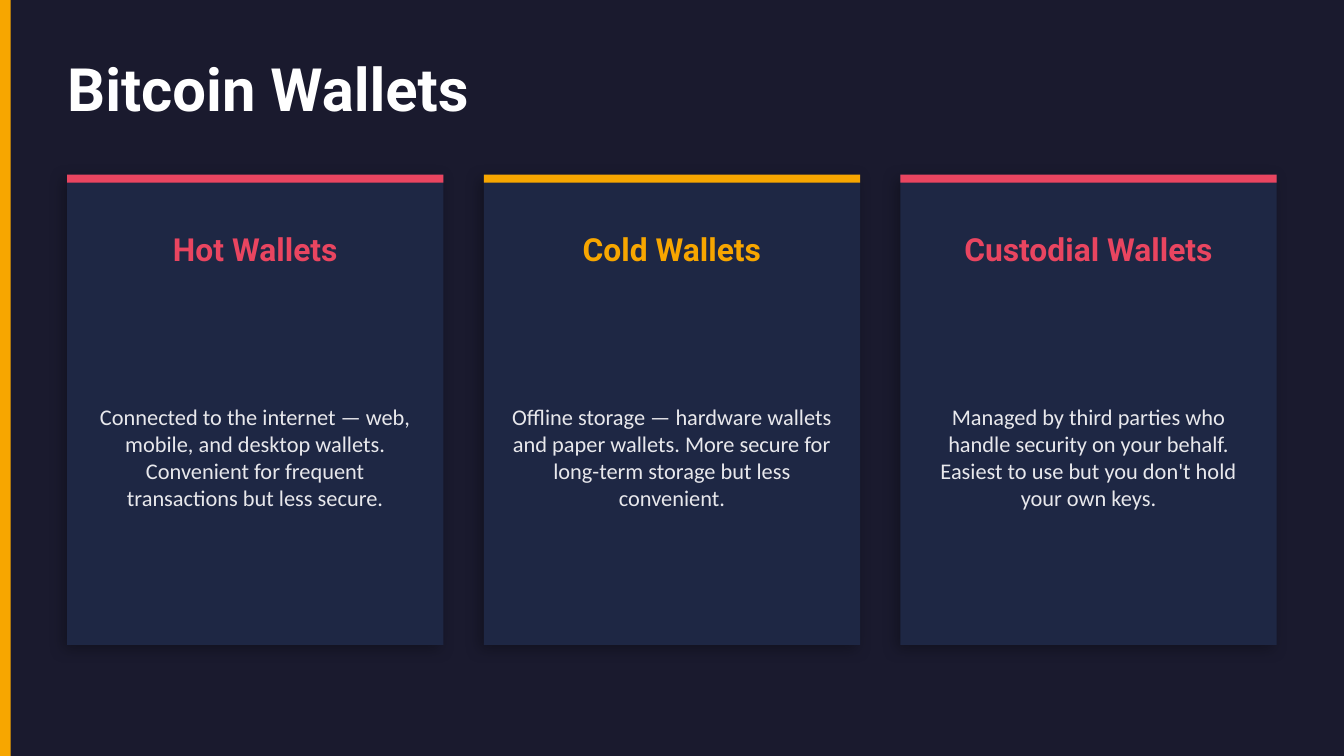
from lxml import etree
from pptx import Presentation
from pptx.dml.color import RGBColor
from pptx.enum.shapes import MSO_SHAPE
from pptx.enum.text import MSO_ANCHOR, PP_ALIGN
from pptx.oxml.ns import qn
from pptx.util import Inches, Pt

RECT = MSO_SHAPE.RECTANGLE
MIDDLE = MSO_ANCHOR.MIDDLE
LEFT, CENTER = PP_ALIGN.LEFT, PP_ALIGN.CENTER

NIGHT = RGBColor(0x1A, 0x1A, 0x2E)
NAVY = RGBColor(0x1E, 0x27, 0x44)
GOLD = RGBColor(0xF7, 0xA6, 0x00)
ROSE = RGBColor(0xE9, 0x45, 0x60)
WHITE = RGBColor(0xFF, 0xFF, 0xFF)
PALE = RGBColor(0xE8, 0xE8, 0xEC)

deck = Presentation()
deck.slide_width = Inches(10)
deck.slide_height = deck.slide_width * 9 // 16
slide = deck.slides.add_slide(deck.slide_layouts[6])
slide.background.fill.solid()
slide.background.fill.fore_color.rgb = NIGHT

UNIT = deck.slide_width / 100
HIGH = deck.slide_height / UNIT
EDGE, GAP, COUNT = 5, 3, 3
WIDE = (100 - 2 * EDGE - (COUNT - 1) * GAP) / COUNT
TOP, TALL, PAD = 13, 35, 2


def add_rect(x, y, w, h, color):
    rect = slide.shapes.add_shape(RECT, *(round(n * UNIT) for n in (x, y, w, h)))
    rect.shadow.inherit = False
    rect.fill.solid()
    rect.fill.fore_color.rgb = color
    rect.line.fill.background()
    return rect


def add_text(x, y, w, h, text, size, face, color, bold=False, align=CENTER):
    box = slide.shapes.add_textbox(*(round(n * UNIT) for n in (x, y, w, h)))
    frame = box.text_frame
    frame.word_wrap = True
    frame.vertical_anchor = MIDDLE
    frame.margin_left = frame.margin_right = 0
    frame.margin_top = frame.margin_bottom = 0
    para = frame.paragraphs[0]
    para.text = text
    para.alignment = align
    font = para.font
    font.size, font.name, font.bold = Pt(size), face, bold
    font.color.rgb = color


add_rect(0, 0, 0.8, HIGH, GOLD)
add_text(EDGE, 3, 90, 7, "Bitcoin Wallets", 32, "Roboto", WHITE, True, LEFT)

cards = [
    ("Hot Wallets", ROSE,
     "Connected to the internet — web, mobile, and desktop wallets. "
     "Convenient for frequent transactions but less secure."),
    ("Cold Wallets", GOLD,
     "Offline storage — hardware wallets and paper wallets. "
     "More secure for long-term storage but less convenient."),
    ("Custodial Wallets", ROSE,
     "Managed by third parties who handle security on your behalf. "
     "Easiest to use but you don't hold your own keys."),
]

for i, (name, color, body) in enumerate(cards):
    x = EDGE + i * (WIDE + GAP)
    card = add_rect(x, TOP, WIDE, TALL, NAVY)
    effects = card._element.spPr.find(qn("a:effectLst"))
    shade = etree.SubElement(effects, qn("a:outerShdw"), blurRad=str(Pt(8)),
                             dist=str(Pt(3)), dir=str(135 * 60000),
                             algn="bl", rotWithShape="0")
    black = etree.SubElement(shade, qn("a:srgbClr"), val="000000")
    etree.SubElement(black, qn("a:alpha"), val="30000")
    add_rect(x, TOP, WIDE, 0.6, color)
    inner = WIDE - 2 * PAD
    add_text(x + PAD, TOP + 3, inner, 5, name, 17, "Roboto", color, True)
    add_text(x + PAD, TOP + 10, inner, 22, body, 12, "Calibri", PALE)

deck.save("out.pptx")
